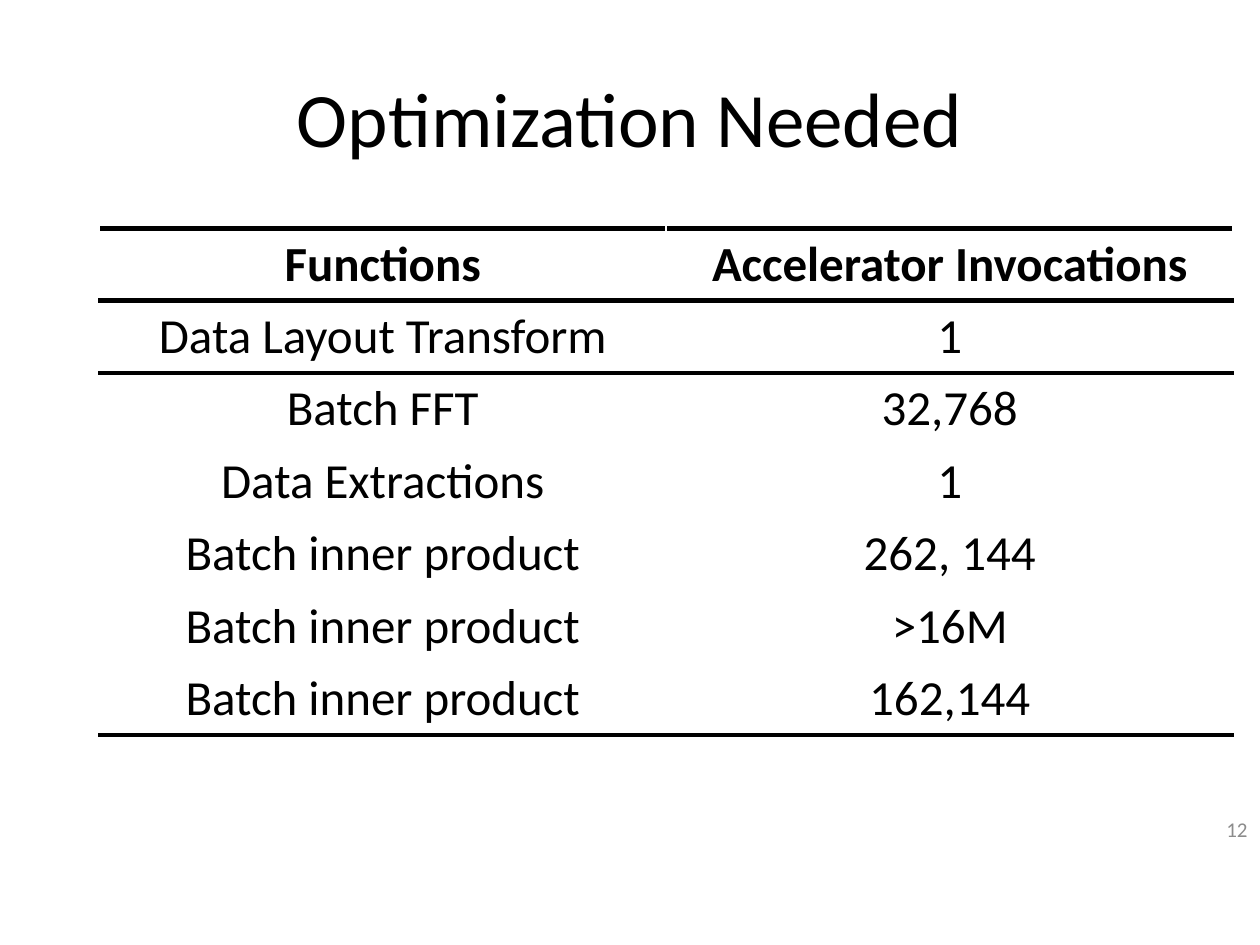
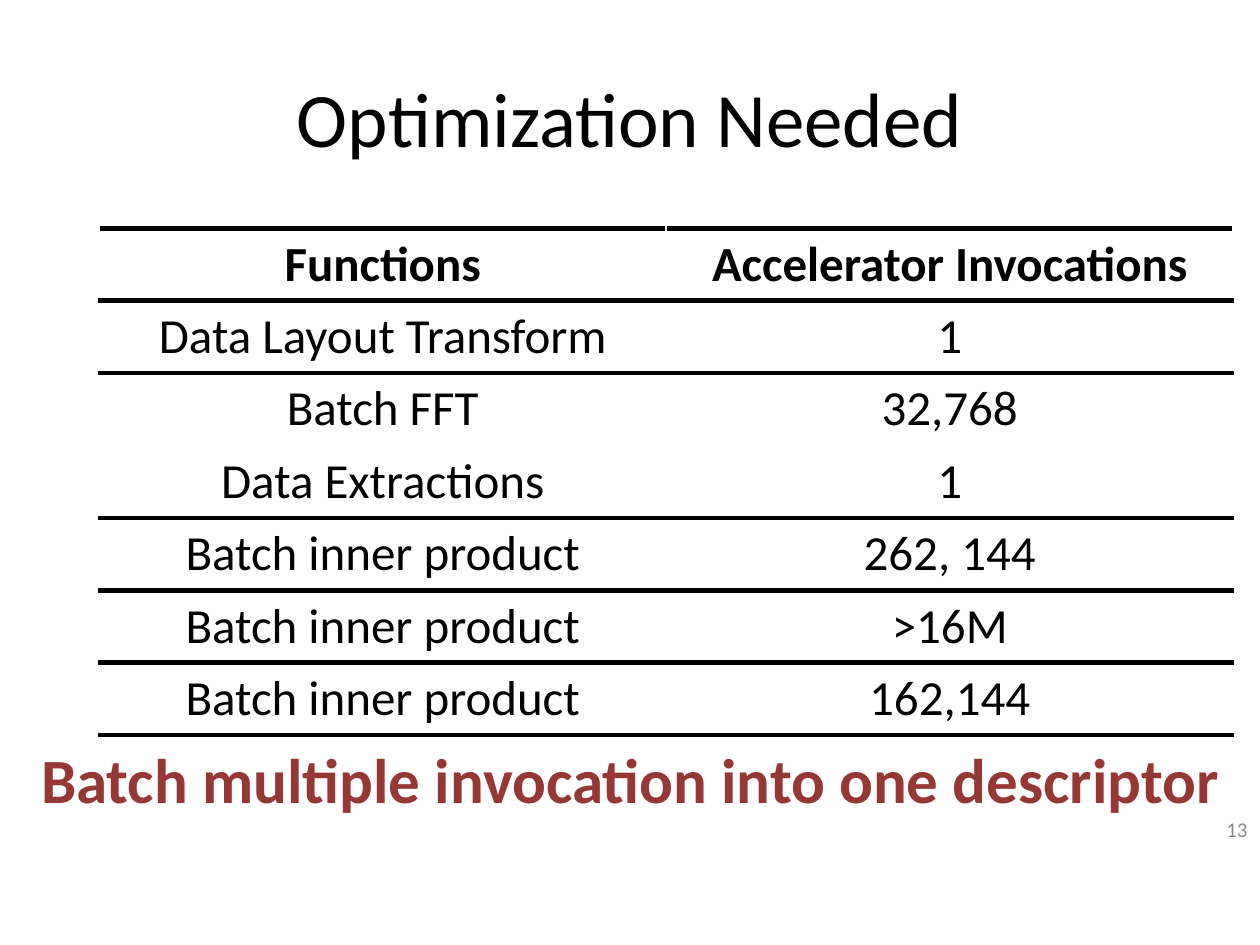
from pptx import Presentation
from pptx import util as u
from pptx.dml.color import RGBColor
from pptx.enum import text
from pptx.oxml.ns import qn
from lxml import etree

# Shared style
FONT = "Calibri"
BLACK, WHITE, GREY, RED = "000000", "FFFFFF", "8C8C8C", "953735"
ALIGN, ANCHOR = text.PP_ALIGN, text.MSO_ANCHOR
TITLE = "Optimization Needed"
ROWS = [
    ("Functions", "Accelerator Invocations"),
    ("Data Layout Transform", "1"),
    ("Batch FFT", "32,768"),
    ("Data Extractions", "1"),
    ("Batch inner product", "262, 144"),
    ("Batch inner product", ">16M"),
    ("Batch inner product", "162,144"),
]
COL_W, ROW_H = u.Cm(11.43), u.Cm(1.46)


def color(code):
    return RGBColor.from_string(code)


def style(frame, size, code=BLACK, bold=False, align=ALIGN.CENTER):
    for para in frame.paragraphs:
        para.alignment = align
        for run in para.runs:
            font = run.font
            font.name, font.size, font.bold = FONT, u.Pt(size), bold
            font.color.rgb = color(code)


def place(shape, left, top, width, height):
    shape.left, shape.top = u.Cm(left), u.Cm(top)
    shape.width, shape.height = u.Cm(width), u.Cm(height)


def add_title(slide):
    title = slide.shapes.title
    place(title, 1.27, 0.76, 22.86, 3.18)
    title.text_frame.text = TITLE
    title.text_frame.vertical_anchor = ANCHOR.MIDDLE
    style(title.text_frame, 44)


def add_label(slide, words, box, size, code, bold=False,
              align=ALIGN.LEFT, anchor=ANCHOR.TOP):
    label = slide.shapes.add_textbox(*map(u.Cm, box))
    frame = label.text_frame
    frame.word_wrap = True
    frame.vertical_anchor = anchor
    frame.text = words
    style(frame, size, code, bold, align)


def add_border(cell, side, code, width):
    props = cell._tc.get_or_add_tcPr()
    line = etree.SubElement(props, qn("a:ln" + side), w=str(u.Pt(width)))
    fill = etree.SubElement(line, qn("a:solidFill"))
    etree.SubElement(fill, qn("a:srgbClr"), val=code)


def add_grid(slide, rules):
    """Draw the table; rules holds the row edges that get a black line."""
    frame = slide.shapes.add_table(len(ROWS), 2, u.Cm(2), u.Cm(4.6),
                                   2 * COL_W, len(ROWS) * ROW_H)
    table = frame.table
    table.first_row = table.horz_banding = False
    for col in table.columns:
        col.width = COL_W
    for r, words in enumerate(ROWS):
        table.rows[r].height = ROW_H
        for c, word in enumerate(words):
            cell = table.cell(r, c)
            cell.text_frame.text = word
            style(cell.text_frame, 28, bold=r == 0)
            # Borders come before the fill in the cell properties
            for side in "LR":
                add_border(cell, side, WHITE, 1)
            for side, edge in (("T", r), ("B", r + 1)):
                ruled = edge in rules
                add_border(cell, side, BLACK if ruled else WHITE,
                           3 if ruled else 1)
            cell.fill.solid()
            cell.fill.fore_color.rgb = color(WHITE)


def add_page(deck, number, rules):
    slide = deck.slides.add_slide(deck.slide_layouts[5])
    add_title(slide)
    add_label(slide, str(number), (19.48, 16.2, 5.92, 1.02), 12, GREY,
              align=ALIGN.RIGHT, anchor=ANCHOR.MIDDLE)
    add_grid(slide, rules)
    return slide


def main():
    deck = Presentation()
    deck.slide_width, deck.slide_height = u.Cm(25.4), u.Cm(19.05)

    # Function list
    add_page(deck, 12, {0, 1, 2, 7})

    # Function list split into groups, with the conclusion
    slide = add_page(deck, 13, {0, 1, 2, 4, 5, 6, 7})
    add_label(slide, "Batch multiple invocation into one descriptor",
              (0.58, 14.81, 24.82, 1.8), 36, RED, bold=True)

    deck.save("out.pptx")


if __name__ == "__main__":
    main()
